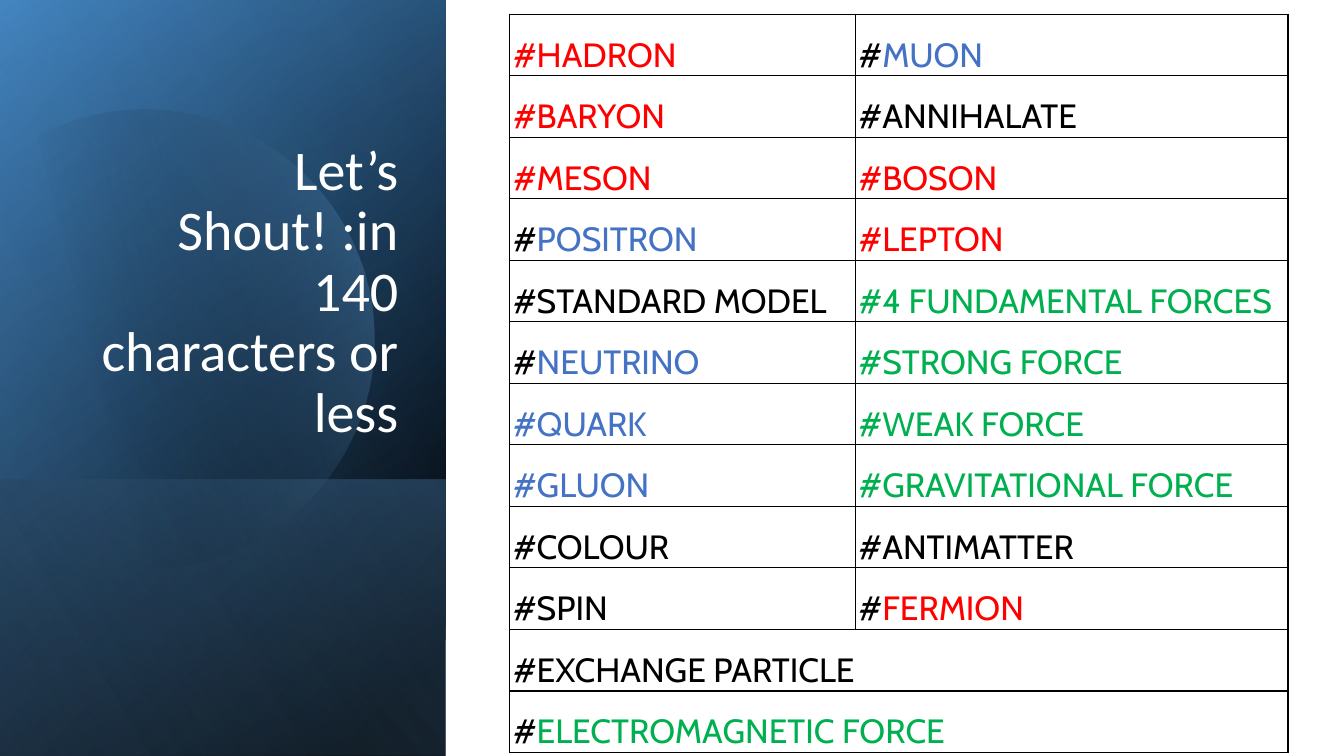
from math import cos, radians, sin

from lxml.etree import SubElement
from pptx import Presentation
from pptx.dml.color import RGBColor
from pptx.enum.shapes import MSO_SHAPE
from pptx.enum.text import MSO_ANCHOR, MSO_AUTO_SIZE, PP_ALIGN
from pptx.oxml.ns import qn
from pptx.util import Cm, Pt

RED, BLUE, GREEN, BLACK = "FF0000", "4472C4", "00B050", "000000"
TITLE = "Let’s Shout! :in 140 characters or less"

# Each cell is a list of (text, colour) runs; a single-cell row spans both columns.
HASHTAGS = [
    [[("#HADRON", RED)], [("#", BLACK), ("MUON", BLUE)]],
    [[("#BARYON", RED)], [("#ANNIHALATE", BLACK)]],
    [[("#MESON", RED)], [("#BOSON", RED)]],
    [[("#", BLACK), ("POSITRON", BLUE)], [("#LEPTON", RED)]],
    [[("#STANDARD MODEL", BLACK)], [("#4 FUNDAMENTAL FORCES", GREEN)]],
    [[("#", BLACK), ("NEUTRINO", BLUE)], [("#STRONG FORCE", GREEN)]],
    [[("#QUARK", BLUE)], [("#WEAK FORCE", GREEN)]],
    [[("#GLUON", BLUE)], [("#GRAVITATIONAL FORCE", GREEN)]],
    [[("#COLOUR", BLACK)], [("#ANTIMATTER", BLACK)]],
    [[("#SPIN", BLACK)], [("#", BLACK), ("FERMION", RED)]],
    [[("#EXCHANGE PARTICLE", BLACK)]],
    [[("#", BLACK), ("ELECTROMAGNETIC FORCE", GREEN)]],
]
COLUMN_WIDTHS = [8.71, 10.9]
ROW_HEIGHT = 1.55

# Gradient stops are (position %, colour, opacity %); lengths are in cm.
PANEL_WIDTH, SLIDE_HEIGHT = 11.23, 19.05
BASE = ([(8, "000000", 100), (100, "2E75B6", 100)], 50)
SHEEN = ([(0, "000000", 0), (99, "5B9BD5", 46)], 30)
FOOT = ([(2, "5B9BD5", 29), (100, "000000", 30)], 130)
DISC = ([(29, "000000", 0), (100, "5B9BD5", 43)], 346)
GLOW = ([(0, "000000", 0), (99, "9DC3E6", 11)], 120)
FOOT_TOP = 12.09
DISC_X, DISC_Y, DISC_RADIUS = 3.63, 8.56, 5.8


def rgb(colour):
    return RGBColor.from_string(colour)


def paint(shape, stops, angle):
    """Fill with a two-stop gradient, its angle measured clockwise."""
    shape.shadow.inherit = False
    shape.line.fill.background()
    shape.fill.gradient()
    shape.fill.gradient_angle = 360 - angle
    for stop, (position, colour, _) in zip(shape.fill.gradient_stops, stops):
        stop.position = position / 100
        stop.color.rgb = rgb(colour)
    colours = list(shape.element.spPr.iter(qn("a:srgbClr")))
    for colour, (_, _, opacity) in zip(colours, stops):
        if opacity < 100:
            SubElement(colour, qn("a:alpha")).set("val", str(opacity * 1000))


def add_panel(slide, top, gradient):
    """Cover the left side from top down with a mirrored, quarter-turned rectangle."""
    length = SLIDE_HEIGHT - top
    panel = slide.shapes.add_shape(
        MSO_SHAPE.RECTANGLE,
        Cm((PANEL_WIDTH - length) / 2),
        Cm(top + (length - PANEL_WIDTH) / 2),
        Cm(length), Cm(PANEL_WIDTH))
    panel.rotation = 90
    panel.element.spPr.find(qn("a:xfrm")).set("flipH", "1")
    paint(panel, *gradient)


def add_disc(slide):
    """Draw the circle, cut off at the left edge of the slide."""
    rim = [(Cm(DISC_X + DISC_RADIUS * cos(radians(a))),
            Cm(DISC_Y + DISC_RADIUS * sin(radians(a))))
           for a in range(-128, 129, 2)]
    builder = slide.shapes.build_freeform(*rim[0])
    builder.add_line_segments(rim[1:], close=True)
    paint(builder.convert_to_shape(), *DISC)


def add_runs(paragraph, runs, font, size):
    for text, colour in runs:
        run = paragraph.add_run()
        run.text = text
        run.font.name = font
        run.font.size = Pt(size)
        run.font.color.rgb = rgb(colour)


def set_title(slide):
    title = slide.shapes.title
    title.left, title.top, title.width, title.height = Cm(1.63), Cm(4.67), Cm(8.66), Cm(6.65)
    frame = title.text_frame
    frame.word_wrap = True
    frame.auto_size = MSO_AUTO_SIZE.NONE
    frame.vertical_anchor = MSO_ANCHOR.BOTTOM
    frame.margin_left = Cm(0.5)
    paragraph = frame.paragraphs[0]
    paragraph.alignment = PP_ALIGN.RIGHT
    paragraph.line_spacing = 0.9
    add_runs(paragraph, [(TITLE, "FFFFFF")], "Calibri", 40)
    title.element.getparent().append(title.element)  # in front of the panels


def add_borders(cell):
    properties = cell._tc.get_or_add_tcPr()
    for index, side in enumerate(("a:lnL", "a:lnR", "a:lnT", "a:lnB")):
        line = properties.makeelement(qn(side), {"w": str(Pt(1))})
        fill = SubElement(line, qn("a:solidFill"))
        SubElement(fill, qn("a:srgbClr")).set("val", BLACK)
        properties.insert(index, line)


def add_hashtag_table(slide):
    table = slide.shapes.add_table(
        len(HASHTAGS), len(COLUMN_WIDTHS), Cm(12.85), Cm(0.36),
        Cm(sum(COLUMN_WIDTHS)), Cm(ROW_HEIGHT * len(HASHTAGS))).table
    table.first_row = table.horz_banding = False
    for column, width in zip(table.columns, COLUMN_WIDTHS):
        column.width = Cm(width)
    for r, hashtags in enumerate(HASHTAGS):
        table.rows[r].height = Cm(ROW_HEIGHT)
        if len(hashtags) == 1:
            table.cell(r, 0).merge(table.cell(r, 1))
        for c in range(len(COLUMN_WIDTHS)):
            cell = table.cell(r, c)
            cell.fill.background()
            add_borders(cell)
            cell.margin_left = cell.margin_right = Cm(0.08)
            cell.margin_top = cell.margin_bottom = 0
            if c < len(hashtags):
                paragraph = cell.text_frame.paragraphs[0]
                paragraph.line_spacing = 1.5
                add_runs(paragraph, hashtags[c], "Cabin", 24)


def main():
    deck = Presentation()
    deck.slide_width, deck.slide_height = Cm(33.87), Cm(SLIDE_HEIGHT)
    slide = deck.slides.add_slide(deck.slide_layouts[5])
    add_panel(slide, 0, BASE)
    add_panel(slide, 0, SHEEN)
    add_panel(slide, FOOT_TOP, FOOT)
    add_disc(slide)
    add_panel(slide, 0, GLOW)
    set_title(slide)
    add_hashtag_table(slide)
    deck.save("out.pptx")


if __name__ == "__main__":
    main()
